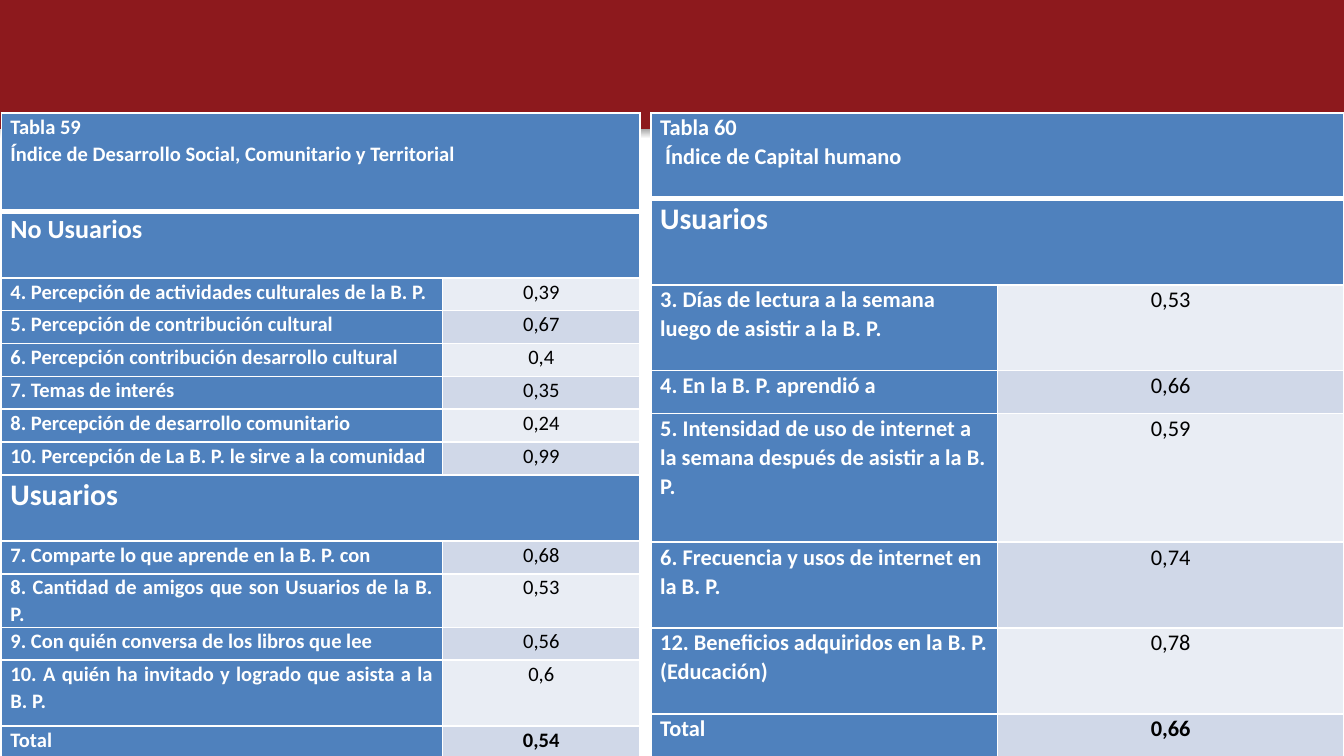
import pptx
import pptx.dml.color
import pptx.enum.shapes
import pptx.enum.text
import pptx.oxml
import pptx.oxml.ns
import pptx.util
from dataclasses import dataclass

Pt = pptx.util.Pt
ALIGN = pptx.enum.text.PP_ALIGN


@dataclass(frozen=True)
class Theme:
    font: str = "Calibri"
    band: str = "8D191D"
    label_fill: str = "4F81BD"
    value_fills: tuple = ("E9EDF4", "D0D8E8")
    light: str = "FFFFFF"
    dark: str = "000000"
    social_size: int = 11
    capital_size: int = 12
    small_heading: int = 14
    large_heading: int = 16
    line_spacing: float = 1.06
    border: int = 1
    title_border: int = 3


THEME = Theme()

# Each row: height, label, value; a row with no value spans the table,
# and its third item is the heading's type size.
SOCIAL_ROWS = [
    (52.8, "Tabla 59\nÍndice de Desarrollo Social, Comunitario y Territorial", THEME.social_size),
    (35.5, "No Usuarios", THEME.small_heading),
    (17.6, "4. Percepción de actividades culturales de la B. P.", "0,39"),
    (17.6, "5. Percepción de contribución cultural", "0,67"),
    (17.6, "6. Percepción contribución desarrollo cultural", "0,4"),
    (17.6, "7. Temas de interés", "0,35"),
    (17.6, "8. Percepción de desarrollo comunitario", "0,24"),
    (17.6, "10. Percepción de La B. P. le sirve a la comunidad", "0,99"),
    (35.5, "Usuarios", THEME.large_heading),
    (17.6, "7. Comparte lo que aprende en la B. P. con", "0,68"),
    (17.6, "8. Cantidad de amigos que son Usuarios de la B. P.", "0,53"),
    (17.6, "9. Con quién conversa de los libros que lee", "0,56"),
    (35.2, "10. A quién ha invitado y logrado que asista a la B. P.", "0,6"),
    (17.6, "Total", "0,54"),
]
CAPITAL_ROWS = [
    (46, "Tabla 60\n Índice de Capital humano", THEME.capital_size),
    (46, "Usuarios", THEME.large_heading),
    (46, "3. Días de lectura a la semana luego de asistir a la B. P.", "0,53"),
    (23, "4. En la B. P. aprendió a", "0,66"),
    (69, "5. Intensidad de uso de internet a la semana después de asistir a la B. P.", "0,59"),
    (46, "6. Frecuencia y usos de internet en la B. P.", "0,74"),
    (46, "12. Beneficios adquiridos en la B. P. (Educación)", "0,78"),
    (23, "Total", "0,66"),
]


def rgb(value):
    return pptx.dml.color.RGBColor.from_string(value)


def add_band(slide):
    shape = slide.shapes.add_shape(
        pptx.enum.shapes.MSO_SHAPE.RECTANGLE, Pt(0), Pt(0), Pt(720), Pt(68.6))
    shape.fill.solid()
    shape.fill.fore_color.rgb = rgb(THEME.band)
    shape.line.color.rgb = rgb(THEME.band)
    shape.line.width = Pt(0.75)
    # Soft shadow straight below the band
    shape.shadow.inherit = False
    effects = shape._element.spPr.find(pptx.oxml.ns.qn("a:effectLst"))
    effects.append(pptx.oxml.parse_xml(
        f'<a:outerShdw {pptx.oxml.ns.nsdecls("a")} blurRad="{Pt(3.1)}" dist="{Pt(1.8)}" '
        f'dir="5400000" rotWithShape="0"><a:srgbClr val="{THEME.dark}">'
        '<a:alpha val="35000"/></a:srgbClr></a:outerShdw>'))


def set_borders(cell, row_index):
    widths = dict.fromkeys(("lnL", "lnR", "lnT", "lnB"), THEME.border)
    if row_index == 0:
        widths["lnB"] = THEME.title_border
    elif row_index == 1:
        widths["lnT"] = THEME.title_border
    properties = cell._tc.get_or_add_tcPr()
    for side, width in widths.items():
        properties.append(pptx.oxml.parse_xml(
            f'<a:{side} {pptx.oxml.ns.nsdecls("a")} w="{Pt(width)}"><a:solidFill>'
            f'<a:srgbClr val="{THEME.light}"/></a:solidFill></a:{side}>'))


def style_cell(cell, row_index, fill):
    set_borders(cell, row_index)
    cell.fill.solid()
    cell.fill.fore_color.rgb = rgb(fill)
    cell.margin_left = cell.margin_right = Pt(4.9)
    cell.margin_top = cell.margin_bottom = Pt(0)


def write_cell(cell, text, size, color, bold, alignment):
    cell.text_frame.text = text
    for paragraph in cell.text_frame.paragraphs:
        paragraph.alignment = alignment
        paragraph.line_spacing = THEME.line_spacing
        for run in paragraph.runs:
            run.font.name = THEME.font
            run.font.size = Pt(size)
            run.font.bold = bold
            run.font.color.rgb = rgb(color)


def add_index_table(slide, left, widths, rows, size, label_alignment):
    height = sum(row[0] for row in rows)
    table = slide.shapes.add_table(
        len(rows), 2, Pt(left), Pt(60.6), Pt(sum(widths)), Pt(height)).table
    for column, width in zip(table.columns, widths):
        column.width = Pt(width)

    for index, (row_height, label, value) in enumerate(rows):
        table.rows[index].height = Pt(row_height)
        label_cell, value_cell = table.cell(index, 0), table.cell(index, 1)
        is_heading = not isinstance(value, str)
        value_fill = THEME.label_fill if is_heading else THEME.value_fills[index % 2]
        style_cell(label_cell, index, THEME.label_fill)
        style_cell(value_cell, index, value_fill)
        write_cell(label_cell, label, value if is_heading else size, THEME.light,
                   True, ALIGN.LEFT if index == 0 else label_alignment)
        if is_heading:
            label_cell.merge(value_cell)
        else:
            write_cell(value_cell, value, size, THEME.dark, label == "Total", ALIGN.CENTER)


def main():
    presentation = pptx.Presentation()
    presentation.slide_width, presentation.slide_height = Pt(720), Pt(405)
    slide = presentation.slides.add_slide(presentation.slide_layouts[6])

    # Top band, then the two index tables side by side
    add_band(slide)
    add_index_table(slide, 0.7, (236.3, 106), SOCIAL_ROWS, THEME.social_size, ALIGN.JUSTIFY)
    add_index_table(slide, 348.8, (185.6, 185.6), CAPITAL_ROWS, THEME.capital_size, ALIGN.LEFT)

    presentation.save("out.pptx")


if __name__ == "__main__":
    main()
